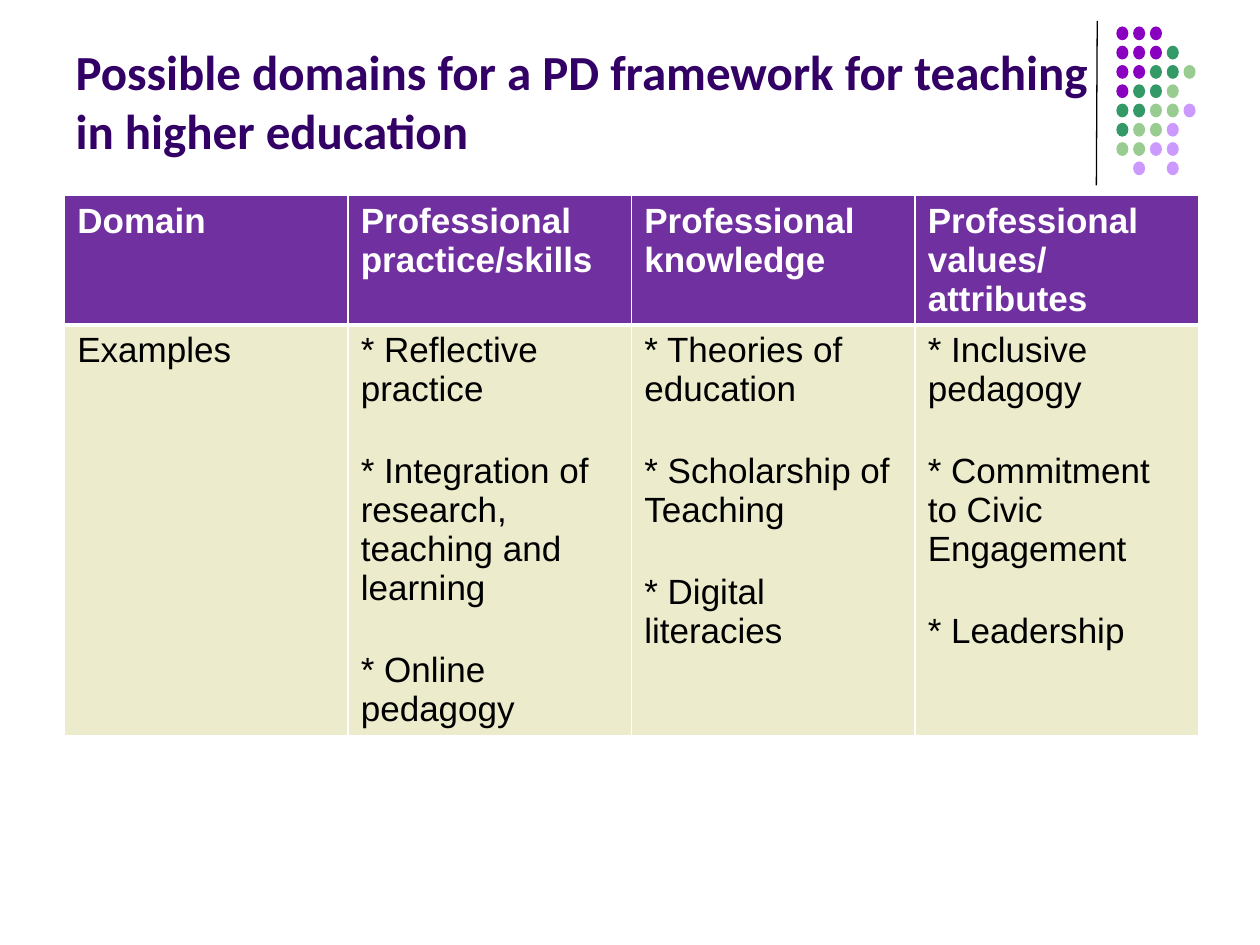
import pptx
import pptx.util
import pptx.dml.color
import pptx.enum.shapes
import pptx.enum.text
import pptx.oxml
import pptx.oxml.ns
from pptx.util import Pt

TITLE = "Possible domains for a PD framework for teaching in higher education"
HEADINGS = ["Domain", "Professional practice/skills", "Professional knowledge",
            "Professional values/ attributes"]
EXAMPLES = [
    ["Examples"],
    ["* Reflective practice", "* Integration of research, teaching and learning",
     "* Online pedagogy"],
    ["* Theories of education", "* Scholarship of Teaching", "* Digital literacies"],
    ["* Inclusive pedagogy", "* Commitment to Civic Engagement", "* Leadership"],
]
# One letter per dot: purple, green, sage, lilac; a dot stands for an empty place.
DOT_ROWS = ["PPP", "PPPG", "PPGGS", "PGGS", "GGSSL", "GSSL", "SSLL", ".L.L"]
COLORS = {
    "P": "8A00C0", "G": "339966", "S": "99CC91", "L": "CC99FF",
    "title": "330066", "header": "7030A0", "body": "ECECCC",
    "white": "FFFFFF", "black": "000000",
}
DOT_LEFT, DOT_TOP, DOT_WIDTH, DOT_HEIGHT = 637.9, 15.1, 6.9, 7.9
DOT_STEP_X, DOT_STEP_Y = 9.6, 11.02
TABLE_LEFT, TABLE_TOP, COLUMN_WIDTH = 37, 111.5, 162
ROW_HEIGHTS = [74.2, 233]
PARAGRAPH_GAP = 24.5


def rgb(name):
    return pptx.dml.color.RGBColor.from_string(COLORS[name])


def add_run(para, text, font, size, color, bold):
    span = para.add_run()
    span.text = text
    span.font.name = font
    span.font.size = Pt(size)
    span.font.bold = bold
    span.font.color.rgb = rgb(color)


def set_borders(cell, bottom_width):
    """Draw white 1 pt borders, with the bottom one at its own width."""
    properties = cell._tc.get_or_add_tcPr()
    widths = {"lnL": 1, "lnR": 1, "lnT": 1, "lnB": bottom_width}
    for index, (tag, width) in enumerate(widths.items()):
        properties.insert(index, pptx.oxml.parse_xml(
            f'<a:{tag} {pptx.oxml.ns.nsdecls("a")} w="{Pt(width)}"><a:solidFill>'
            f'<a:srgbClr val="{COLORS["white"]}"/></a:solidFill></a:{tag}>'))


def fill_cell(cell, lines, is_header):
    cell.fill.solid()
    cell.fill.fore_color.rgb = rgb("header" if is_header else "body")
    set_borders(cell, 3 if is_header else 1)
    for index, line in enumerate(lines):
        frame = cell.text_frame
        para = frame.add_paragraph() if index else frame.paragraphs[0]
        if index:
            para.space_before = Pt(PARAGRAPH_GAP)
        add_run(para, line, "Arial", 20, "white" if is_header else "black", is_header)


def add_divider(slide):
    line = slide.shapes.add_connector(pptx.enum.shapes.MSO_CONNECTOR.STRAIGHT,
                                      Pt(627), Pt(12), Pt(626.5), Pt(106))
    line.line.color.rgb = rgb("black")
    line.line.width = Pt(0.75)
    line._element.spPr.append(pptx.oxml.parse_xml(
        f'<a:effectLst {pptx.oxml.ns.nsdecls("a")}/>'))


def add_dots(slide):
    for row, letters in enumerate(DOT_ROWS):
        for column, letter in enumerate(letters):
            if letter == ".":
                continue
            dot = slide.shapes.add_shape(
                pptx.enum.shapes.MSO_SHAPE.OVAL,
                Pt(DOT_LEFT + column * DOT_STEP_X), Pt(DOT_TOP + row * DOT_STEP_Y),
                Pt(DOT_WIDTH), Pt(DOT_HEIGHT))
            dot.shadow.inherit = False
            dot.fill.solid()
            dot.fill.fore_color.rgb = rgb(letter)
            dot.line.fill.background()


def add_title(slide):
    title = slide.shapes.title
    title.left, title.top, title.width, title.height = Pt(36), Pt(9.5), Pt(594), Pt(85)
    frame = title.text_frame
    frame.word_wrap = True
    frame.auto_size = pptx.enum.text.MSO_AUTO_SIZE.NONE
    frame.vertical_anchor = pptx.enum.text.MSO_ANCHOR.BOTTOM
    para = frame.paragraphs[0]
    para.alignment = pptx.enum.text.PP_ALIGN.LEFT
    add_run(para, TITLE, "Calibri", 28, "title", True)


def add_domain_table(slide):
    table = slide.shapes.add_table(
        2, len(HEADINGS), Pt(TABLE_LEFT), Pt(TABLE_TOP),
        Pt(COLUMN_WIDTH * len(HEADINGS)), Pt(sum(ROW_HEIGHTS))).table
    for row, height in zip(table.rows, ROW_HEIGHTS):
        row.height = Pt(height)
    for column, (heading, examples) in enumerate(zip(HEADINGS, EXAMPLES)):
        table.columns[column].width = Pt(COLUMN_WIDTH)
        fill_cell(table.cell(0, column), [heading], True)
        fill_cell(table.cell(1, column), examples, False)


def main():
    deck = pptx.Presentation()
    deck.slide_width, deck.slide_height = Pt(720), Pt(540)
    slide = deck.slides.add_slide(deck.slide_layouts[5])
    add_divider(slide)
    add_dots(slide)
    add_title(slide)
    add_domain_table(slide)
    deck.save("out.pptx")


if __name__ == "__main__":
    main()
